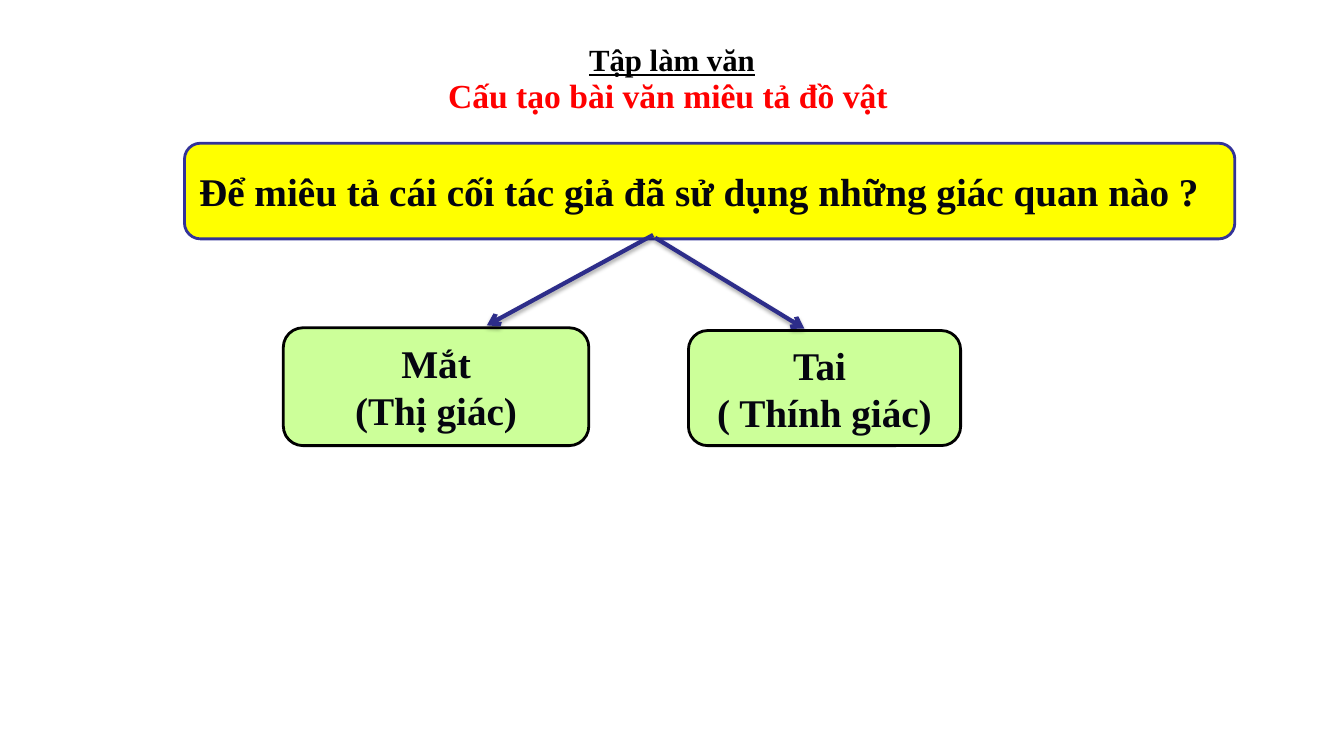
import pptx
import pptx.util
import pptx.dml.color
import pptx.enum.shapes
import pptx.enum.text
import pptx.oxml
import pptx.oxml.ns

Cm, Pt = pptx.util.Cm, pptx.util.Pt
ALIGN = pptx.enum.text.PP_ALIGN
ANCHOR = pptx.enum.text.MSO_ANCHOR


def rgb(value):
    return pptx.dml.color.RGBColor.from_string(value)


def write(sp, text, size=28, color="05050F", underline=None, align=ALIGN.CENTER,
          anchor=ANCHOR.MIDDLE, wrap=False, hanging=0):
    tf = sp.text_frame
    tf.word_wrap = wrap
    tf.auto_size = pptx.enum.text.MSO_AUTO_SIZE.NONE
    tf.vertical_anchor = anchor
    tf.text = text
    for p in tf.paragraphs:
        p.alignment = align
        if hanging:
            pPr = p._p.get_or_add_pPr()
            pPr.set("marL", str(Cm(hanging)))
            pPr.set("indent", str(-Cm(hanging)))
        font = p.runs[0].font
        font.name, font.size, font.bold = "Times New Roman", Pt(size), True
        font.underline = underline
        font.color.rgb = rgb(color)


prs = pptx.Presentation()
prs.slide_width, prs.slide_height = Cm(33.87), Cm(19.05)
s = prs.slides.add_slide(prs.slide_layouts[5])

# Lesson title and subject heading
title = s.shapes.title
title.left, title.top, title.width, title.height = Cm(8.89), Cm(1.75), Cm(15.88), Cm(2.49)
write(title, "Cấu tạo bài văn miêu tả đồ vật", size=24, color="FF0000",
      anchor=ANCHOR.TOP, wrap=True)
subject = s.shapes.add_textbox(Cm(10.16), Cm(0.91), Cm(13.55), Cm(1.19))
write(subject, "Tập làm văn", size=22, color="000000", underline=True,
      anchor=ANCHOR.TOP, wrap=True)

# Question and the two senses that answer it
boxes = [
    ("Mắt\n(Thị giác)", 7.14, 8.26, 7.7, 2.97, "CCFF99", "000000", ALIGN.CENTER),
    ("Tai \n( Thính giác)", 17.35, 8.33, 6.86, 2.9, "CCFF99", "000000", ALIGN.CENTER),
    ("Để miêu tả cái cối tác giả đã sử dụng những giác quan nào ?",
     4.65, 3.61, 26.47, 2.41, "FFFF00", "333399", ALIGN.LEFT),
]
for text, x, y, w, h, fill, line, align in boxes:
    sp = s.shapes.add_shape(pptx.enum.shapes.MSO_SHAPE.FLOWCHART_ALTERNATE_PROCESS,
                            Cm(x), Cm(y), Cm(w), Cm(h))
    sp.shadow.inherit = False
    sp.fill.solid()
    sp.fill.fore_color.rgb = rgb(fill)
    sp.line.color.rgb = rgb(line)
    sp.line.width = Pt(2)
    write(sp, text, align=align, hanging=0.95)

# Arrows from the question to each sense, with a soft shadow
SHADOW = (f'<a:effectLst {pptx.oxml.ns.nsdecls("a")}>'
          f'<a:outerShdw blurRad="{Pt(3.1)}" dist="{Pt(1.8)}" dir="5400000" rotWithShape="0">'
          '<a:srgbClr val="000000"><a:alpha val="35000"/></a:srgbClr>'
          '</a:outerShdw></a:effectLst>')
HEAD = f'<a:tailEnd {pptx.oxml.ns.nsdecls("a")} type="arrow"/>'
for x1, y1, x2, y2 in [(16.46, 5.92, 12.27, 8.2), (16.51, 5.99, 20.27, 8.28)]:
    arrow = s.shapes.add_connector(pptx.enum.shapes.MSO_CONNECTOR.STRAIGHT,
                                   Cm(x1), Cm(y1), Cm(x2), Cm(y2))
    arrow.line.color.rgb = rgb("2D2D8A")
    arrow.line.width = Pt(3)
    arrow.line._get_or_add_ln().append(pptx.oxml.parse_xml(HEAD))
    arrow._element.spPr.append(pptx.oxml.parse_xml(SHADOW))

prs.save("out.pptx")
